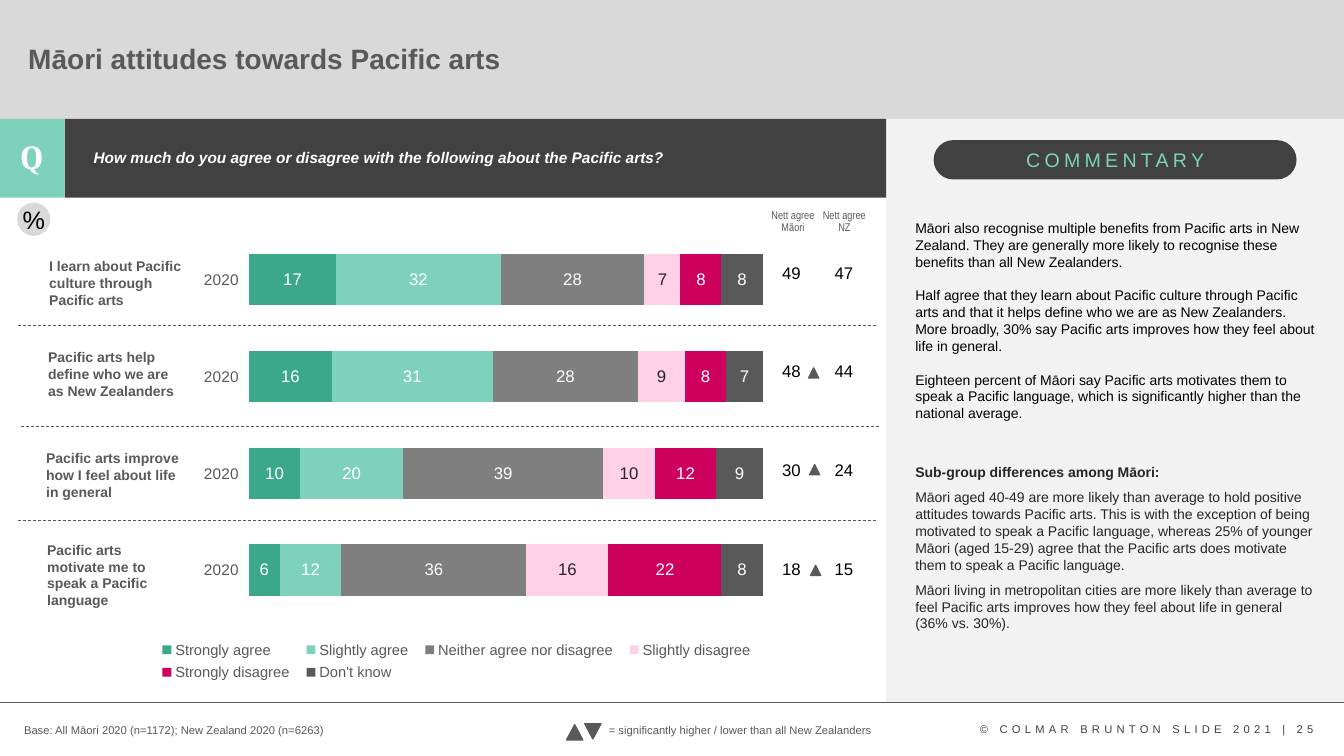
from lxml import etree
from pptx import Presentation
from pptx.chart.data import CategoryChartData
from pptx.dml.color import RGBColor
from pptx.enum.chart import XL_CHART_TYPE, XL_LEGEND_POSITION
from pptx.enum.dml import MSO_LINE
from pptx.enum.shapes import MSO_CONNECTOR, MSO_SHAPE
from pptx.enum.text import MSO_ANCHOR, PP_ALIGN
from pptx.oxml import parse_xml
from pptx.oxml.ns import nsdecls, qn
from pptx.util import Pt

PX = 9144  # one px is a hundredth of an inch
RECT, ROUND = MSO_SHAPE.RECTANGLE, MSO_SHAPE.ROUNDED_RECTANGLE
OVAL, TRI = MSO_SHAPE.OVAL, MSO_SHAPE.ISOSCELES_TRIANGLE
LEFT, MID = PP_ALIGN.LEFT, PP_ALIGN.CENTER
MIDDLE = MSO_ANCHOR.MIDDLE
NO_GRID = "{2D5ABB26-0587-4C30-8999-92F81FD0307C}"

BLACK, WHITE = RGBColor(0, 0, 0), RGBColor(255, 255, 255)
INK, GREY = RGBColor(0x26, 0x26, 0x26), RGBColor(0x59, 0x59, 0x59)
DARK, CHAR = RGBColor(0x41, 0x41, 0x41), RGBColor(0x40, 0x40, 0x40)
BAND, PALE = RGBColor(0xD9, 0xD9, 0xD9), RGBColor(0xF2, 0xF2, 0xF2)
MINT, GREEN = RGBColor(0x7E, 0xD2, 0xBB), RGBColor(0x3A, 0xA8, 0x89)
STONE = RGBColor(0x7F, 0x7F, 0x7F)
PINK, RED = RGBColor(0xFF, 0xD1, 0xE6), RGBColor(0xCD, 0, 0x5F)

TITLE = "Māori attitudes towards Pacific arts"
ASK = "How much do you agree or disagree with the following about the Pacific arts?"
YEAR = "2020"
# answer, fill, label colour, share per statement from top to bottom
ANSWERS = [
    ("Strongly agree", GREEN, WHITE, (17, 16, 10, 6)),
    ("Slightly agree", MINT, WHITE, (32, 31, 20, 12)),
    ("Neither agree nor disagree", STONE, WHITE, (28, 28, 39, 36)),
    ("Slightly disagree", PINK, INK, (7, 9, 10, 16)),
    ("Strongly disagree", RED, WHITE, (8, 8, 12, 22)),
    ("Don't know", GREY, WHITE, (8, 7, 9, 8)),
]
# statement, left, top
CLAIMS = [
    ("I learn about Pacific culture through Pacific arts", 39, 251),
    ("Pacific arts help define who we are as New Zealanders", 38, 341),
    ("Pacific arts improve how I feel about life in general", 36, 441),
    ("Pacific arts motivate me to speak a Pacific language", 37, 532),
]
NETT = [("49", "47"), ("48", "44"), ("30", "24"), ("18", "15")]
HEADS = [(752, ["Nett agree Māori"]), (803, ["Nett agree", "NZ"])]
RULES = [(18, 323), (21, 423), (18, 516)]
MARKS = [(802, 365, 10, 10, 0), (803, 461, 10, 10, 0), (804, 561, 10, 10, 0),
         (562, 719, 16, 15, 0), (580, 718, 16, 15, 180)]
# text, space before, colour, bold
NOTES = [
    ("Māori also recognise multiple benefits from Pacific arts in New Zealand. "
     "They are generally more likely to recognise these benefits than all New "
     "Zealanders.", 0, BLACK, False),
    ("Half agree that they learn about Pacific culture through Pacific arts and "
     "that it helps define who we are as New Zealanders. More broadly, 30% say "
     "Pacific arts improves how they feel about life in general.", 12, BLACK, False),
    ("Eighteen percent of Māori say Pacific arts motivates them to speak a Pacific "
     "language, which is significantly higher than the national average.",
     12, BLACK, False),
    ("Sub-group differences among Māori:", 30, INK, True),
    ("Māori aged 40-49 are more likely than average to hold positive attitudes "
     "towards Pacific arts. This is with the exception of being motivated to speak "
     "a Pacific language, whereas 25% of younger Māori (aged 15-29) agree that the "
     "Pacific arts does motivate them to speak a Pacific language.", 6, INK, False),
    ("Māori living in metropolitan cities are more likely than average to feel "
     "Pacific arts improves how they feel about life in general (36% vs. 30%).",
     6, INK, False),
]
BASE = "Base: All Māori 2020 (n=1172); New Zealand 2020 (n=6263)"
KEY = "= significantly higher / lower than all New Zealanders"
RIGHTS = "© COLMAR BRUNTON SLIDE 2021 | 25"


def emu(*nums):
    return [n * PX for n in nums]


def style(font, size, color, bold=False, name="Arial"):
    font.size, font.name, font.bold = Pt(size), name, bold
    font.color.rgb = color


def write(par, text, size, color, bold=False, name="Arial", align=LEFT, line=1.0):
    par.alignment, par.line_spacing = align, line
    run = par.add_run()
    run.text = text
    style(run.font, size, color, bold, name)
    return run


def label(box, lines, size, color, wrap=True, **look):
    """Add a text box with one paragraph per line; return its last run."""
    frame = slide.shapes.add_textbox(*emu(*box)).text_frame
    frame.word_wrap = wrap
    for i, text in enumerate(lines):
        par = frame.add_paragraph() if i else frame.paragraphs[0]
        run = write(par, text, size, color, **look)
    return run


def space(run):
    run.font._element.set("spc", "300")


def block(kind, box, fill, edge=None):
    shape = slide.shapes.add_shape(kind, *emu(*box))
    shape.shadow.inherit = False
    shape.fill.solid()
    shape.fill.fore_color.rgb = fill
    if edge:
        shape.line.color.rgb, shape.line.width = edge, Pt(1)
    else:
        shape.line.fill.background()
    return shape


def rule(x1, x2, y, dash=None):
    line = slide.shapes.add_connector(MSO_CONNECTOR.STRAIGHT, *emu(x1, y, x2, y))
    line.line.color.rgb, line.line.width = GREY, Pt(0.5)
    if dash:
        line.line.dash_style = dash
    etree.SubElement(line._element.spPr, qn("a:effectLst"))


def place(part, index, box, inner=False):
    """Fix a chart part at fractions (x, y, w, h) of the chart."""
    for old in part.findall(qn("c:layout")):
        part.remove(old)
    pairs = [("layoutTarget", "inner")] if inner else []
    pairs += [("xMode", "edge"), ("yMode", "edge"), *zip("xywh", box)]
    spots = "".join(f'<c:{k} val="{v}"/>' for k, v in pairs)
    part.insert(index, parse_xml(f'<c:layout {nsdecls("c")}><c:manualLayout>{spots}'
                                 '</c:manualLayout></c:layout>'))


def plot(box):
    data = CategoryChartData()
    data.categories = [YEAR] * len(CLAIMS)
    for name, _, _, vals in ANSWERS:
        data.add_series(name, vals[::-1])
    chart = slide.shapes.add_chart(XL_CHART_TYPE.BAR_STACKED_100, *emu(*box), data).chart
    style(chart.font, 10, BLACK)
    chart.has_title = False
    chart.has_legend = True
    chart.legend.position = XL_LEGEND_POSITION.BOTTOM
    chart.legend.include_in_layout = False
    style(chart.legend.font, 10.5, GREY)
    style(chart.category_axis.tick_labels.font, 11, GREY)
    chart.category_axis.format.line.fill.background()
    chart.value_axis.visible = False
    chart.value_axis.has_major_gridlines = False
    bars = chart.plots[0]
    bars.gap_width, bars.overlap, bars.vary_by_categories = 89, 100, False
    for ser, (_, fill, ink, _) in zip(bars.series, ANSWERS):
        ser.format.fill.solid()
        ser.format.fill.fore_color.rgb = fill
        ser.data_labels.show_value = True
        style(ser.data_labels.font, 12, ink)
    place(chart._chartSpace.chart.plotArea, 0, (0.166, 0.147, 0.814, 0.692), True)
    place(chart.legend._element, 1, (0.01, 0.87, 0.97, 0.09))


def grid(box):
    table = slide.shapes.add_table(len(NETT), 2, *emu(*box)).table
    table.first_row = table.horz_banding = False
    table._tbl.tblPr.find(qn("a:tableStyleId")).text = NO_GRID
    for r, row in enumerate(NETT):
        for c, text in enumerate(row):
            cell = table.cell(r, c)
            cell.fill.background()
            cell.vertical_anchor = MIDDLE
            write(cell.text_frame.paragraphs[0], text, 12, BLACK, align=MID)


prs = Presentation()
prs.slide_width, prs.slide_height = emu(1333, 750)
slide = prs.slides.add_slide(prs.slide_layouts[5])

title = slide.shapes.title
title.left, title.top, title.width, title.height = emu(18, 21, 1119, 78)
title.text_frame.vertical_anchor = MIDDLE
title.text_frame.word_wrap = True
write(title.text_frame.paragraphs[0], TITLE, 20, GREY, True, line=0.9)
band = block(RECT, (0, -2, 1333, 120), BAND)
title._element.addprevious(band._element)

block(RECT, (879, 118, 454, 579), PALE)
block(RECT, (64, 118, 815, 78), DARK)
block(RECT, (0, 118, 64, 78), MINT)
rule(0, 1333, 697)
label((8, 130, 47, 50), ["Q"], 24, WHITE, bold=True, name="Cambria", align=MID)
label((83, 144, 760, 46), [ASK], 11, WHITE, bold=True, line=0.9).font.italic = True
block(ROUND, (926, 139, 360, 39), DARK).adjustments[0] = 0.5
space(label((1008, 142, 202, 34), ["COMMENTARY"], 14, MINT, wrap=False))

plot((143, 148, 626, 555))
for x, y in RULES:
    rule(x, x + 852, y, MSO_LINE.DASH)
grid((759, 222, 104, 392))
for text, x, y in CLAIMS:
    label((x, y, 154, 61), [text], 10, GREY, bold=True)
for x, lines in HEADS:
    label((x, 203, 69, 34), lines, 8, GREY, name="Arial Narrow", align=MID, line=0.9)
for *box, turn in MARKS:
    block(TRI, box, GREY, GREY).rotation = turn

frame = block(OVAL, (17, 201, 33, 33), BAND).text_frame
frame.margin_left = frame.margin_right = frame.margin_top = frame.margin_bottom = 0
frame.vertical_anchor, frame.word_wrap = MIDDLE, False
write(frame.paragraphs[0], "%", 18, BLACK, align=MID)

frame = slide.shapes.add_textbox(*emu(898, 213, 419, 448)).text_frame
frame.word_wrap = True
for i, (text, gap, ink, bold) in enumerate(NOTES):
    par = frame.add_paragraph() if i else frame.paragraphs[0]
    if gap:
        par.space_before = Pt(gap)
    write(par, text, 10, ink, bold)

label((14, 713, 463, 24), [BASE], 8, GREY)
label((594, 713, 284, 24), [KEY], 8, GREY, wrap=False)
space(label((962, 712, 361, 24), [RIGHTS], 8, CHAR))

prs.save("out.pptx")
